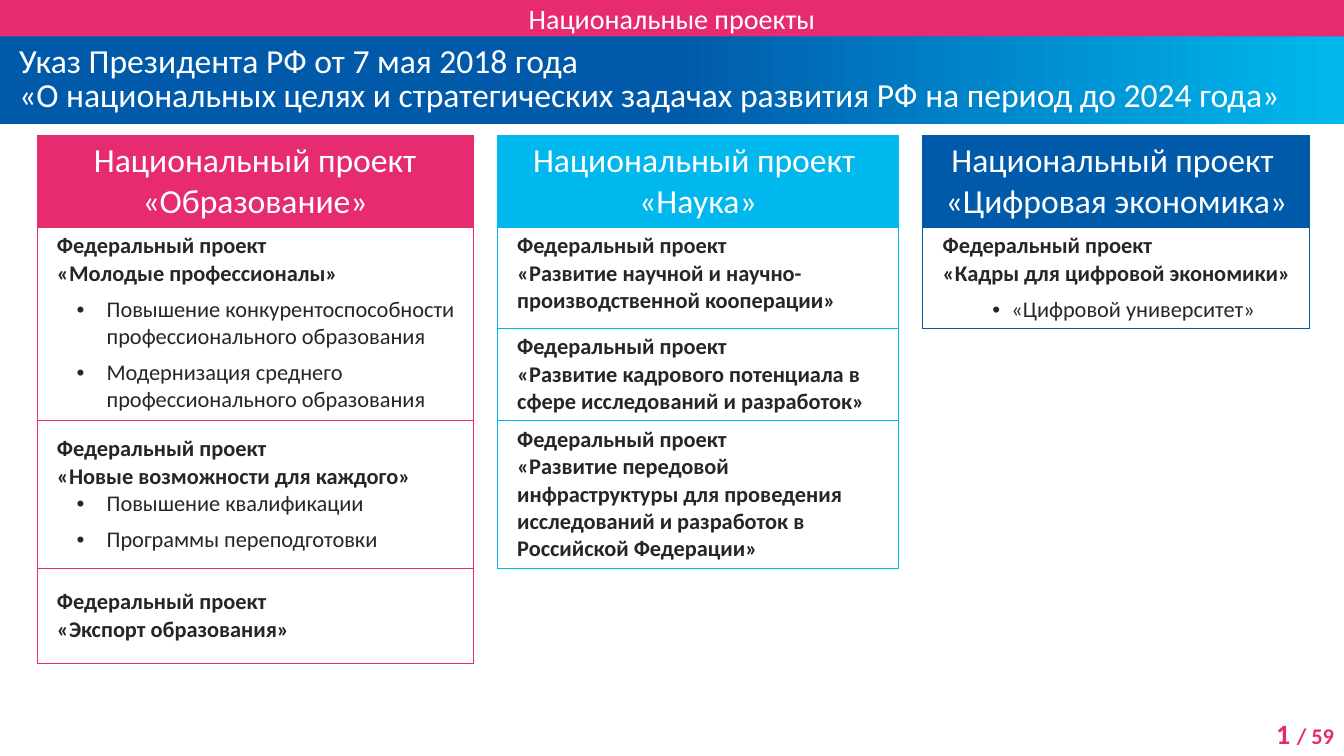
import pptx
import pptx.util
import pptx.dml.color
import pptx.enum.text
import lxml.etree

Pt = pptx.util.Pt
ALIGN = pptx.enum.text.PP_ALIGN
MIDDLE = pptx.enum.text.MSO_ANCHOR.MIDDLE
TOP = pptx.enum.text.MSO_ANCHOR.TOP

PINK, SKY, NAVY = "E72B70", "00B8EE", "005AAA"
WHITE, INK = "FFFFFF", "262626"
FONT = "Calibri"
WIDE, HIGH = 960, 540

BANNER = "Национальные проекты"
TITLE = ("Указ Президента РФ от 7 мая 2018 года \v"
         "«О национальных целях и стратегических задачах развития РФ на период до 2024 года»")
PAGE = ("1 ", "/ 59")
LEAD = "Федеральный проект \v"

# Each project: table column, colour, heading lines, boxes.
# Each box: first row, last row, anchor, project name, bullets.
PROJECTS = [
    (0, PINK, ["Национальный проект «Образование»"], [
        (1, 2, TOP, "«Молодые профессионалы»",
         ["Повышение конкурентоспособности профессионального образования",
          "Модернизация среднего профессионального образования"]),
        (3, 3, MIDDLE, "«Новые возможности для каждого»",
         ["Повышение квалификации", "Программы переподготовки"]),
        (4, 4, MIDDLE, "«Экспорт образования»", []),
    ]),
    (2, SKY, ["Национальный проект ", "«Наука»"], [
        (1, 1, TOP, "«Развитие научной и научно-производственной кооперации»", []),
        (2, 2, TOP, "«Развитие кадрового потенциала в сфере исследований и разработок»", []),
        (3, 3, MIDDLE, "«Развитие передовой инфраструктуры для проведения "
                       "исследований и разработок в Российской Федерации»", []),
    ]),
    (4, NAVY, ["Национальный проект ", "«Цифровая экономика»"], [
        (1, 1, TOP, "«Кадры для цифровой экономики»", ["«Цифровой университет»"]),
    ]),
]
COLS = [311.5, 16.75, 286.75, 16.75, 276.5]
ROWS = [65, 72, 65.75, 105.5, 68]
INDENT = {0: (42.5, -21.5), 4: (56, -13.5)}


def rgb(code):
    return pptx.dml.color.RGBColor.from_string(code)


def style(par, size, tone, bold=False):
    for run in par.runs:
        font = run.font
        font.name, font.size, font.bold = FONT, Pt(size), bold
        font.color.rgb = rgb(tone)


def indent(par, left, first=0):
    props = par._p.get_or_add_pPr()
    props.set("marL", str(Pt(left)))
    props.set("indent", str(Pt(first)))
    return props


def node(up, tag, **attrs):
    return lxml.etree.SubElement(up, pptx.oxml.ns.qn("a:" + tag), **attrs)


def place(shape, left, top, width, height):
    shape.left, shape.top = Pt(left), Pt(top)
    shape.width, shape.height = Pt(width), Pt(height)


def band(shape, text, top, height, pad, size, align):
    """Full-width strip with one paragraph of white text."""
    place(shape, 0, top, WIDE, height)
    frame = shape.text_frame
    frame.text = text
    frame.auto_size = pptx.enum.text.MSO_AUTO_SIZE.NONE
    frame.word_wrap = True
    frame.vertical_anchor = MIDDLE
    frame.margin_left = frame.margin_right = Pt(pad)
    frame.margin_top = frame.margin_bottom = 0
    par = frame.paragraphs[0]
    par.alignment, par.space_before = align, Pt(0)
    style(par, size, WHITE)
    return par


def edge(cell, tones):
    """Draw the left, right, top and bottom borders; None hides one."""
    props = cell._tc.get_or_add_tcPr()
    for spot, (side, tone) in enumerate(zip("LRTB", tones)):
        line = node(props, "ln" + side, w=str(Pt(0.75)))
        if tone:
            node(node(line, "solidFill"), "srgbClr", val=tone)
        else:
            node(line, "noFill")
        props.insert(spot, line)


def head(cell, lines, tone):
    cell.fill.solid()
    cell.fill.fore_color.rgb = rgb(tone)
    cell.vertical_anchor = MIDDLE
    cell.text_frame.text = "\n".join(lines)
    for par in cell.text_frame.paragraphs:
        par.alignment = ALIGN.CENTER
        style(par, 24, WHITE)


def fill_box(cell, anchor, name, items, shift):
    cell.vertical_anchor = anchor
    frame = cell.text_frame
    par = frame.paragraphs[0]
    par.text = LEAD + name
    indent(par, 7)
    style(par, 16, INK, True)
    for rank, item in enumerate(items):
        par = frame.add_paragraph()
        par.text = item
        props = indent(par, *shift)
        if rank == 0 and anchor == TOP:
            par.space_before = Pt(6)
        if len(items) > 1:
            par.space_after = Pt(6)
        node(props, "buFont", typeface="Arial")
        node(props, "buChar", char="•")
        style(par, 16, INK)


def build_table(slide):
    grid = slide.shapes.add_table(len(ROWS), len(COLS), Pt(26.5), Pt(96.75),
                                  Pt(sum(COLS)), Pt(sum(ROWS))).table
    grid.first_row = grid.horz_banding = False
    for col, width in zip(grid.columns, COLS):
        col.width = Pt(width)
    for row, height in zip(grid.rows, ROWS):
        row.height = Pt(height)
    for cell in grid.iter_cells():
        cell.fill.background()

    tones = {}
    for col, tone, lines, boxes in PROJECTS:
        head(grid.cell(0, col), lines, tone)
        tones[0, col] = tone
        for first, last, anchor, name, items in boxes:
            cell = grid.cell(first, col)
            if last > first:
                cell.merge(grid.cell(last, col))
            fill_box(cell, anchor, name, items, INDENT.get(col))
            for row in range(first, last + 1):
                tones[row, col] = tone

    # An edge takes the colour of its own box, or else of the box beside it.
    for row in range(len(ROWS)):
        for col in range(len(COLS)):
            near = [(row, col - 1), (row, col + 1), (row - 1, col), (row + 1, col)]
            own = tones.get((row, col))
            edge(grid.cell(row, col), [own or tones.get(key) for key in near])


def main():
    deck = pptx.Presentation()
    deck.slide_width, deck.slide_height = Pt(WIDE), Pt(HIGH)
    slide = deck.slides.add_slide(deck.slide_layouts[0])

    title, banner = slide.placeholders
    par = band(title, TITLE, 26, 62.75, 7.2, 24, ALIGN.LEFT)
    indent(par, 6.5)
    par.line_spacing = Pt(24)
    title.fill.gradient()
    title.fill.gradient_angle = 0
    for stop, spot, tone in zip(title.fill.gradient_stops, (0.5, 1), (NAVY, SKY)):
        stop.position = spot
        stop.color.rgb = rgb(tone)

    band(banner, BANNER, 0, 26, 0, 20, ALIGN.CENTER)
    banner.fill.solid()
    banner.fill.fore_color.rgb = rgb(PINK)

    build_table(slide)

    page = slide.shapes.add_textbox(Pt(873.5), Pt(508.5), Pt(86.5), Pt(31.5))
    page.text_frame.word_wrap = True
    par = page.text_frame.paragraphs[0]
    par.alignment = ALIGN.RIGHT
    for part in PAGE:
        par.add_run().text = part
    style(par, 16, PINK, True)
    par.runs[0].font.size = Pt(20)

    deck.save("out.pptx")


if __name__ == "__main__":
    main()
